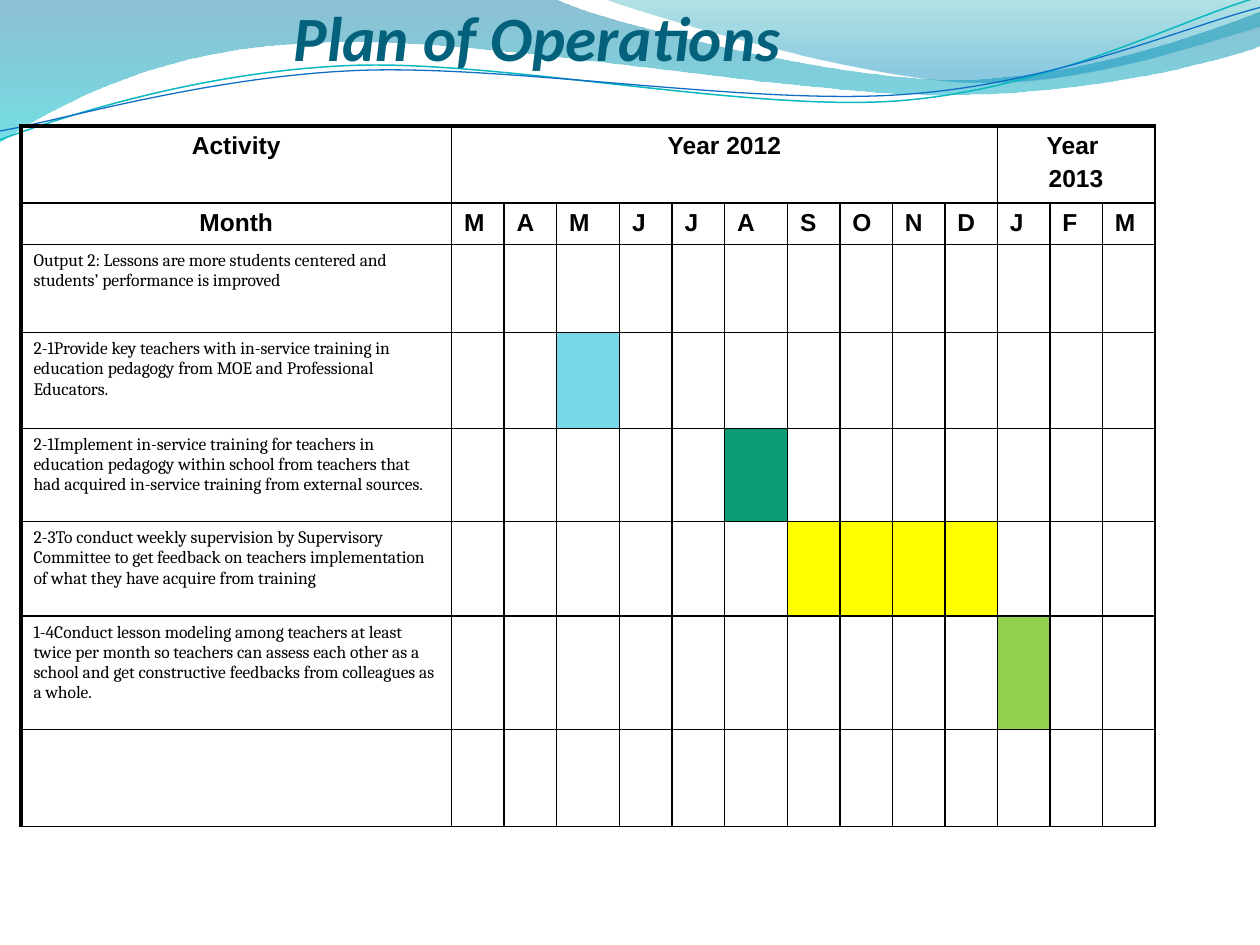
"""Build the plan of operations slide: a month-by-month activity schedule."""
import dataclasses
import math

import lxml.etree
import pptx
import pptx.dml.color
import pptx.enum.text
import pptx.oxml.ns
import pptx.util


@dataclasses.dataclass(frozen=True)
class Theme:
    """Colours, fonts and sizes of the slide."""
    title: str = "04617B"
    ink: str = "000000"
    external: str = "77D9E8"
    internal: str = "0C9B74"
    supervision: str = "FFFF00"
    modeling: str = "92D050"
    title_font: str = "Calibri"
    head_font: str = "Arial"
    body_font: str = "Cambria"
    title_size: int = 36
    head_size: int = 14
    body_size: int = 10
    rule: float = 1
    edge: float = 2.25


THEME = Theme()
COLUMNS, ROWS = 10, 7.5
UNIT = pptx.util.Inches(1)

MONTHS = "MAMJJASONDJFM"
WIDE_MONTHS = (2, 5)
MONTHS_2012 = 10
STEP = 1 / 12
ACTIVITY_STEPS, WIDE_STEPS, NARROW_STEPS = 41, 6, 5
ROW_HEIGHTS = (0.61, 0.33, 0.7, 0.76, 0.74, 0.75, 0.9, 0.77)

ACTIVITIES = (
    ("Output 2: Lessons are more students centered and students’ performance is improved", (), None),
    ("2-1Provide key teachers with in-service training in education pedagogy from MOE and "
     "Professional Educators.", (2,), THEME.external),
    ("2-1Implement in-service training for teachers in education pedagogy within school from "
     "teachers that had acquired in-service training from external sources.", (5,), THEME.internal),
    ("2-3To conduct weekly supervision by Supervisory Committee to get feedback on teachers "
     "implementation of what they have acquire from training", range(6, 10), THEME.supervision),
    ("1-4Conduct lesson modeling among teachers at least twice per month so teachers can assess "
     "each other as a school and get constructive feedbacks from colleagues as a whole.",
     (10,), THEME.modeling),
)

BANDS = (
    ([[(0, 0)], [(4.4, -0.01)], [(4.76, 0.17), (6.64, 0.63), (7.58, 0.63)],
      [(8.53, 0.63), (9.58, 0.26), (10, 0.09)], [(10.01, 0.36)],
      [(9.83, 0.44), (8.7, 0.76), (7.46, 0.75)], [(6.22, 0.75), (3.82, 0.28), (2.57, 0.34)],
      [(1.29, 0.36), (0.46, 0.83), (-0.01, 1.13)], [(0, 0)]],
     ((0, "0074A1", 45), (1, "00C6CF", 55))),
    ([[(4.79, -0.01)], [(5.09, 0.11), (6.82, 0.62), (7.69, 0.65)],
      [(8.56, 0.69), (9.61, 0.32), (10, 0.21)], [(10, 0)], [(4.79, -0.01)]],
     ((0, "00A1A9", 30), (0.8, "008BBF", 45))),
)
STRAND_TILT = -2.7
STRANDS = (
    ([[(0, 1.11)], [(0.48, 0.93), (1.58, 0.57), (2.77, 0.52)],
      [(3.95, 0.47), (5.93, 0.89), (7.13, 0.8)], [(8.33, 0.71), (9.38, 0.15), (9.98, -0.02)]],
     (4.99, 0.575), "0AB8BF", 0.85),
    ([[(0, 1.04)], [(0.47, 0.96), (1.64, 0.61), (2.83, 0.56)],
      [(4.03, 0.51), (5.97, 0.84), (7.17, 0.75)], [(8.36, 0.67), (9.41, 0.21), (10, 0.06)]],
     (5, 0.59), "0F6FC6", 0.75),
)


def grid(units):
    """Turn grid units into a slide length."""
    return pptx.util.Emu(round(units * UNIT))


def rgb(code):
    """Turn a hex code into a colour."""
    return pptx.dml.color.RGBColor.from_string(code)


def child(parent, tag, **attributes):
    """Append a drawing element to its parent."""
    return lxml.etree.SubElement(parent, pptx.oxml.ns.qn(tag), attributes)


def turn(point, centre, degrees):
    """Turn a point clockwise around a centre."""
    x, y = point[0] - centre[0], point[1] - centre[1]
    cos, sin = math.cos(math.radians(degrees)), math.sin(math.radians(degrees))
    return centre[0] + x * cos - y * sin, centre[1] + x * sin + y * cos


def add_wave(shapes, segments, closed):
    """Add an outline of straight and cubic segments without a shadow."""
    points = [(grid(x), grid(y)) for segment in segments for x, y in segment]
    builder = shapes.build_freeform(*points[0], scale=1.0)
    builder.add_line_segments(points[1:], close=closed)
    wave = builder.convert_to_shape()
    wave.shadow.inherit = False
    steps = wave.element.iter(pptx.oxml.ns.qn("a:lnTo"))
    steps = iter(list(steps))
    for segment in segments[1:]:
        corners = [next(steps) for _ in segment]
        if len(corners) == 3:
            outline = corners[0].getparent()
            curve = child(outline, "a:cubicBezTo")
            outline.replace(corners[0], curve)
            for corner in corners:
                curve.append(corner[0])
            for corner in corners[1:]:
                outline.remove(corner)
    return wave


def add_band(slide, segments, stops):
    """Add a translucent gradient band."""
    band = add_wave(slide.shapes, segments, True)
    band.line.fill.background()
    band.fill.gradient()
    band.fill.gradient_angle = 270
    for stop, (position, colour, _) in zip(band.fill.gradient_stops, stops):
        stop.position = position
        stop.color.rgb = rgb(colour)
    for tint, (_, _, opacity) in zip(band.element.iter(pptx.oxml.ns.qn("a:srgbClr")), stops):
        child(tint, "a:alpha", val=str(opacity * 1000))


def add_strand(strands, segments, centre, colour, weight):
    """Add a thin tilted strand to the group of strands."""
    level = [[turn(point, centre, -STRAND_TILT) for point in segment] for segment in segments]
    strand = add_wave(strands.shapes, level, False)
    strand.rotation = STRAND_TILT
    strand.fill.background()
    strand.line.color.rgb = rgb(colour)
    strand.line.width = pptx.util.Pt(weight)


def write(paragraph, words, font, size, colour, bold=False, italic=False):
    """Add one formatted run to a paragraph."""
    run = paragraph.add_run()
    run.text = words
    run.font.name, run.font.size = font, pptx.util.Pt(size)
    run.font.bold, run.font.italic = bold, italic
    run.font.color.rgb = rgb(colour)


def space_before(paragraph):
    """Set a fifth of a line above a paragraph."""
    spacing = child(paragraph._p.get_or_add_pPr(), "a:spcBef")
    child(spacing, "a:spcPct", val="20000")


def place_title(slide, words):
    """Move and fill the title placeholder."""
    title = slide.shapes.title
    title.left, title.top, title.width, title.height = map(grid, (2.33, 0.17, 5.83, 0.42))
    frame = title.text_frame
    frame.margin_left = frame.margin_right = frame.margin_bottom = 0
    frame.margin_top = grid(0.05)
    frame.vertical_anchor = pptx.enum.text.MSO_ANCHOR.BOTTOM
    frame.auto_size = pptx.enum.text.MSO_AUTO_SIZE.NONE
    frame.paragraphs[0].alignment = pptx.enum.text.PP_ALIGN.LEFT
    write(frame.paragraphs[0], words, THEME.title_font, THEME.title_size, THEME.title, True, True)
    title.element.getparent().append(title.element)


def write_heading(cell, *lines, centred=True):
    """Write bold heading lines in a cell."""
    for index, words in enumerate(lines):
        paragraph = cell.text_frame.add_paragraph() if index else cell.text_frame.paragraphs[0]
        space_before(paragraph)
        if centred:
            paragraph.alignment = pptx.enum.text.PP_ALIGN.CENTER
        write(paragraph, words, THEME.head_font, THEME.head_size, THEME.ink, True)


def rule_cell(cell, row, column):
    """Clear a cell's fill and draw its four borders."""
    cell.fill.background()
    properties = cell._tc.get_or_add_tcPr()
    heavy = {"a:lnL": column == 0, "a:lnT": row == 0}
    for index, side in enumerate(("a:lnL", "a:lnR", "a:lnT", "a:lnB")):
        weight = THEME.edge if heavy.get(side) else THEME.rule
        border = child(properties, side, w=str(pptx.util.Pt(weight)))
        child(child(border, "a:solidFill"), "a:srgbClr", val=THEME.ink)
        properties.insert(index, border)


def add_schedule(slide):
    """Add the ruled activity table with its month headings."""
    steps = [ACTIVITY_STEPS] + [WIDE_STEPS if month in WIDE_MONTHS else NARROW_STEPS
                                for month in range(len(MONTHS))]
    schedule = slide.shapes.add_table(len(ROW_HEIGHTS), len(steps), grid(2 * STEP), grid(1),
                                      grid(sum(steps) * STEP), grid(sum(ROW_HEIGHTS)))
    table = schedule.table
    table.first_row = table.horz_banding = False
    for column, width in zip(table.columns, steps):
        column.width = grid(width * STEP)
    for row, height in zip(table.rows, ROW_HEIGHTS):
        row.height = grid(height)
    schedule.height = grid(6.15)
    for row in range(len(ROW_HEIGHTS)):
        for column in range(len(steps)):
            rule_cell(table.cell(row, column), row, column)
    table.cell(0, 1).merge(table.cell(0, MONTHS_2012))
    table.cell(0, MONTHS_2012 + 1).merge(table.cell(0, len(MONTHS)))
    write_heading(table.cell(0, 0), "Activity")
    write_heading(table.cell(0, 1), "Year 2012")
    write_heading(table.cell(0, MONTHS_2012 + 1), "Year ", "2013")
    write_heading(table.cell(1, 0), "Month")
    for column, month in enumerate(MONTHS, 1):
        write_heading(table.cell(1, column), month, centred=False)
    return table


def fill_activities(table):
    """Write each activity and colour its months."""
    for row, (activity, months, colour) in enumerate(ACTIVITIES, 2):
        paragraph = table.cell(row, 0).text_frame.paragraphs[0]
        if not months:
            space_before(paragraph)
        write(paragraph, activity, THEME.body_font, THEME.body_size, THEME.ink)
        for month in months:
            fill = table.cell(row, month + 1).fill
            fill.solid()
            fill.fore_color.rgb = rgb(colour)


def main():
    """Build and save the slide."""
    deck = pptx.Presentation()
    deck.slide_width, deck.slide_height = grid(COLUMNS), grid(ROWS)
    slide = deck.slides.add_slide(deck.slide_layouts[5])
    for band in BANDS:
        add_band(slide, *band)
    strands = slide.shapes.add_group_shape()
    for strand in STRANDS:
        add_strand(strands, *strand)
    place_title(slide, "Plan of Operations")
    fill_activities(add_schedule(slide))
    deck.save("out.pptx")


if __name__ == "__main__":
    main()
